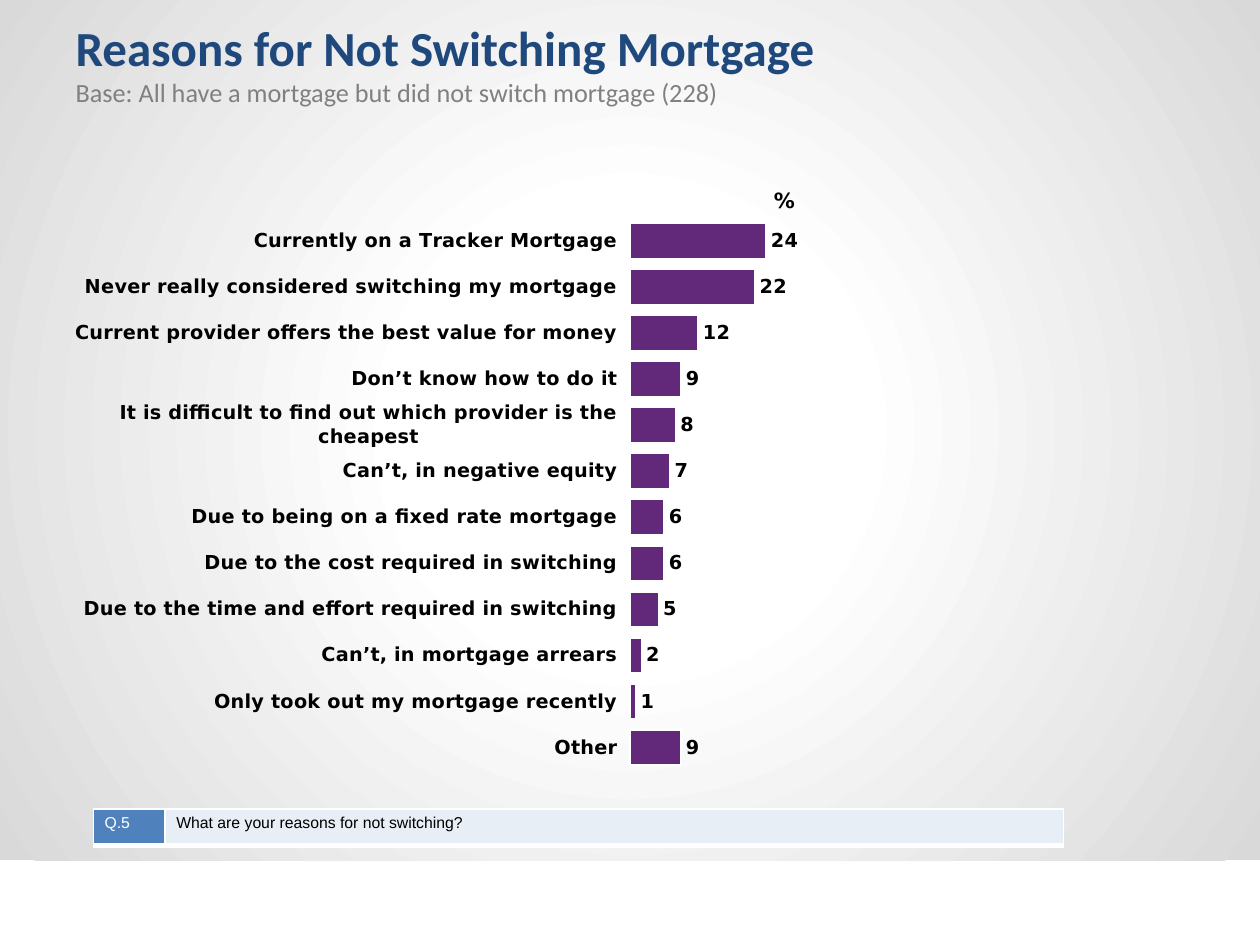
import pptx
import pptx.chart.data
import pptx.dml.color
import pptx.enum.chart
import pptx.enum.shapes
import pptx.enum.text
import pptx.oxml
import pptx.oxml.ns
import pptx.util
from lxml import etree

Pt = pptx.util.Pt
qn = pptx.oxml.ns.qn
CH = pptx.enum.chart
TX = pptx.enum.text

TITLE = "Reasons for Not Switching Mortgage"
BASE = "Base: All have a mortgage but did not switch mortgage (228)"
UNIT = "%"
REASONS = [
    ("Currently on a Tracker Mortgage", 24),
    ("Never really considered switching my mortgage", 22),
    ("Current provider offers the best value for money", 12),
    ("Don’t know how to do it", 9),
    ("It is difficult to find out which provider is the cheapest", 8),
    ("Can’t, in negative equity", 7),
    ("Due to being on a fixed rate mortgage", 6),
    ("Due to the cost required in switching", 6),
    ("Due to the time and effort required in switching", 5),
    ("Can’t, in mortgage arrears", 2),
    ("Only took out my mortgage recently", 1),
    ("Other", 9),
]
# text, column width, text colour, fill colour
QUESTION = [
    ("Q.5", 41, "white", "blue"),
    ("What are your reasons for not switching?", 513.5, "black", "pale"),
]
COLORS = {
    "white": "FFFFFF", "black": "000000", "gray": "D9D9D9", "navy": "1F497D",
    "muted": "808080", "purple": "62297B", "blue": "4F81BD", "pale": "E7EEF5",
}
BORDERS = [("lnL", 1), ("lnR", 1), ("lnT", 1), ("lnB", 3)]
WIDE, HIGH = 720, 540
NS = 'xmlns:a="http://schemas.openxmlformats.org/drawingml/2006/main"'


def paint(color):
    return pptx.dml.color.RGBColor.from_string(COLORS[color])


def style(font, face, size, color, bold=False):
    font.name, font.size, font.bold = face, Pt(size), bold
    font.color.rgb = paint(color)


def write(para, text, *look):
    run = para.add_run()
    run.text = text
    style(run.font, *look)


def add_glow(slide):
    """Put the round white-to-gray backdrop behind everything else."""
    rect = slide.shapes.add_shape(
        pptx.enum.shapes.MSO_SHAPE.RECTANGLE, 0, 0, Pt(WIDE), Pt(491.5))
    rect.shadow.inherit = False
    rect.line.fill.background()
    grad = pptx.oxml.parse_xml(
        f'<a:gradFill {NS} rotWithShape="1"><a:gsLst>'
        f'<a:gs pos="30000"><a:srgbClr val="{COLORS["white"]}"/></a:gs>'
        f'<a:gs pos="100000"><a:srgbClr val="{COLORS["gray"]}"/></a:gs>'
        '</a:gsLst><a:path path="circle"><a:fillToRect l="50000" t="50000" '
        'r="50000" b="50000"/></a:path></a:gradFill>')
    rect.element.spPr.find(qn("a:prstGeom")).addnext(grad)
    slide.shapes.element.insert(2, rect.element)


def add_title(slide):
    title = slide.shapes.title
    title.left, title.top = Pt(36), Pt(14.4)
    title.width, title.height = Pt(648), Pt(51)
    frame = title.text_frame
    frame.auto_size = TX.MSO_AUTO_SIZE.NONE
    frame.vertical_anchor = TX.MSO_ANCHOR.BOTTOM
    para = frame.paragraphs[0]
    para.alignment = TX.PP_ALIGN.LEFT
    write(para, TITLE, "Calibri", 28, "navy", True)
    para.add_line_break()
    # The break needs its own size, or it takes the tall layout size.
    etree.SubElement(para._p.find(qn("a:br")), qn("a:rPr"), sz="2800")
    write(para, BASE, "Calibri", 15, "muted")


def set_plot(chart, x, y, w, h):
    """Fix the inner plot area, as shares of the chart."""
    area = chart._chartSpace.chart.plotArea
    old = area.find(qn("c:layout"))
    if old is not None:
        area.remove(old)
    layout = etree.Element(qn("c:layout"))
    area.insert(0, layout)
    manual = etree.SubElement(layout, qn("c:manualLayout"))
    parts = [("layoutTarget", "inner"), ("xMode", "edge"), ("yMode", "edge"),
             ("x", x), ("y", y), ("w", w), ("h", h)]
    for name, val in parts:
        etree.SubElement(manual, qn("c:" + name), val=str(val))


def add_bars(slide):
    data = pptx.chart.data.CategoryChartData(number_format="0")
    data.categories = [name for name, val in REASONS]
    data.add_series("Series 1", [val for name, val in REASONS])
    chart = slide.shapes.add_chart(
        CH.XL_CHART_TYPE.BAR_CLUSTERED,
        Pt(36), Pt(114.5), Pt(648), Pt(336), data).chart
    chart.has_legend = chart.has_title = False
    style(chart.font, "Calibri", 18, "black")
    set_plot(chart, 0.5, 0.03, 0.5, 0.94)

    cats = chart.category_axis
    cats.reverse_order = True
    cats.major_tick_mark = CH.XL_TICK_MARK.OUTSIDE
    cats.format.line.fill.background()
    style(cats.tick_labels.font, "DejaVu Sans", 11, "black", True)
    vals = chart.value_axis
    vals.minimum_scale, vals.maximum_scale = 0, 100
    vals.has_major_gridlines = vals.visible = False

    plot = chart.plots[0]
    plot.gap_width, plot.vary_by_categories = 32, False
    bars = plot.series[0].format
    bars.fill.solid()
    bars.fill.fore_color.rgb = paint("purple")
    bars.line.color.rgb = paint("white")
    bars.line.width = Pt(0.75)
    plot.has_data_labels = True
    labels = plot.data_labels
    labels.show_value = True
    labels.position = CH.XL_LABEL_POSITION.OUTSIDE_END
    labels.number_format, labels.number_format_is_linked = "0", False
    style(labels.font, "DejaVu Sans", 11, "black", True)


def add_unit(slide):
    frame = slide.shapes.add_textbox(
        Pt(424.8), Pt(103.5), Pt(46.8), Pt(21.6)).text_frame
    frame.word_wrap = True
    frame.auto_size = TX.MSO_AUTO_SIZE.SHAPE_TO_FIT_TEXT
    frame.vertical_anchor = TX.MSO_ANCHOR.BOTTOM
    para = frame.paragraphs[0]
    para.alignment = TX.PP_ALIGN.CENTER
    write(para, UNIT, "DejaVu Sans", 12, "black", True)


def edge(cell):
    props = cell._tc.get_or_add_tcPr()
    for spot, (side, width) in enumerate(BORDERS):
        props.insert(spot, pptx.oxml.parse_xml(
            f'<a:{side} {NS} w="{Pt(width)}"><a:solidFill>'
            f'<a:srgbClr val="{COLORS["white"]}"/></a:solidFill></a:{side}>'))


def add_question(slide):
    total = sum(width for text, width, ink, fill in QUESTION)
    table = slide.shapes.add_table(
        1, len(QUESTION), Pt(53.3), Pt(462.2), Pt(total), Pt(20.9)).table
    table.first_row = table.horz_banding = False
    for col, (text, width, ink, fill) in enumerate(QUESTION):
        table.columns[col].width = Pt(width)
        cell = table.cell(0, col)
        cell.margin_left = cell.margin_right = Pt(6.5)
        cell.margin_top = cell.margin_bottom = Pt(3)
        cell.fill.solid()
        cell.fill.fore_color.rgb = paint(fill)
        edge(cell)
        para = cell.text_frame.paragraphs[0]
        para.alignment = TX.PP_ALIGN.LEFT
        write(para, text, "Arial", 9, ink)


def main():
    deck = pptx.Presentation()
    deck.slide_width, deck.slide_height = Pt(WIDE), Pt(HIGH)
    slide = deck.slides.add_slide(deck.slide_layouts[5])
    add_glow(slide)
    add_title(slide)
    add_bars(slide)
    add_unit(slide)
    add_question(slide)
    deck.save("out.pptx")


if __name__ == "__main__":
    main()
